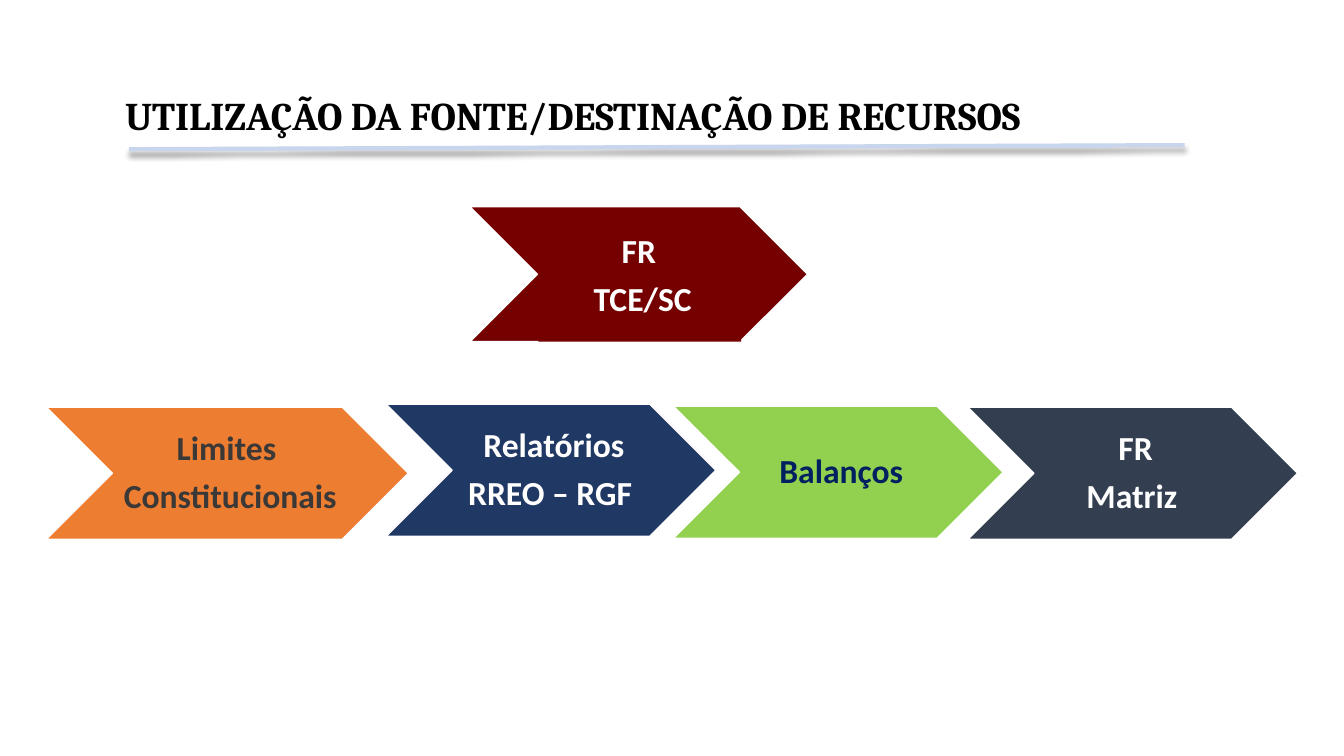
from dataclasses import dataclass

from lxml import etree
from pptx import Presentation
from pptx.dml.color import RGBColor
from pptx.enum.shapes import MSO_CONNECTOR, MSO_SHAPE
from pptx.enum.text import MSO_ANCHOR, MSO_AUTO_SIZE, PP_ALIGN
from pptx.oxml import parse_xml
from pptx.oxml.ns import nsdecls
from pptx.slide import Slide
from pptx.text.text import TextFrame
from pptx.util import Inches, Pt

BLACK = RGBColor(0x00, 0x00, 0x00)
WHITE = RGBColor(0xFF, 0xFF, 0xFF)
PALE_BLUE = RGBColor(0xC7, 0xD5, 0xED)
ORANGE = RGBColor(0xED, 0x7D, 0x31)
GREEN = RGBColor(0x92, 0xD0, 0x50)
NAVY = RGBColor(0x20, 0x38, 0x64)
SLATE = RGBColor(0x33, 0x3F, 0x50)
DARK_RED = RGBColor(0x74, 0x00, 0x00)
CHARCOAL = RGBColor(0x3B, 0x38, 0x38)
DEEP_BLUE = RGBColor(0x00, 0x20, 0x60)


@dataclass(frozen=True)
class Block:
    left: float
    top: float
    width: float
    height: float
    fill: RGBColor
    lines: tuple[str, ...] = ()
    color: RGBColor = WHITE
    kind: MSO_SHAPE = MSO_SHAPE.CHEVRON
    outlined: bool = True


BLOCKS = (
    Block(0.46, 4.04, 3.59, 1.31, ORANGE, ("Limites ", "Constitucionais"), CHARCOAL),
    Block(6.68, 4.03, 3.27, 1.31, GREEN, ("Balanços",), DEEP_BLUE),
    Block(3.83, 4.01, 3.27, 1.31, NAVY, ("Relatórios", "RREO – RGF ")),
    Block(9.6, 4.04, 3.27, 1.31, SLATE, ("FR", "Matriz ")),
    Block(4.66, 2.05, 3.35, 1.34, DARK_RED),
    Block(5.34, 2.09, 2.01, 1.3, DARK_RED, ("FR ", "TCE/SC"),
          kind=MSO_SHAPE.RECTANGLE, outlined=False),
)


def write_text(
    frame: TextFrame,
    lines: tuple[str, ...],
    *,
    font: str,
    size: float,
    color: RGBColor,
    align: PP_ALIGN = PP_ALIGN.LEFT,
    anchor: MSO_ANCHOR = MSO_ANCHOR.TOP,
    line_spacing: float = 1.0,
    space_after: float = 0,
) -> None:
    frame.word_wrap = True
    frame.vertical_anchor = anchor
    for index, line in enumerate(lines):
        paragraph = frame.add_paragraph() if index else frame.paragraphs[0]
        paragraph.alignment = align
        paragraph.line_spacing = line_spacing
        paragraph.space_before = Pt(0)
        paragraph.space_after = Pt(space_after)
        run = paragraph.add_run()
        run.text = line
        run.font.name = font
        run.font.size = Pt(size)
        run.font.bold = True
        run.font.color.rgb = color


def add_title(slide: Slide) -> None:
    title = slide.shapes.title
    title.left, title.top = Inches(1.14), Inches(0.86)
    title.width, title.height = Inches(11.06), Inches(0.57)
    title.text_frame.auto_size = MSO_AUTO_SIZE.NONE
    write_text(title.text_frame, ("UTILIZAÇÃO DA FONTE/DESTINAÇÃO DE RECURSOS",),
               font="Cambria", size=28, color=BLACK)


def add_title_rule(slide: Slide) -> None:
    rule = slide.shapes.add_connector(
        MSO_CONNECTOR.STRAIGHT, Inches(1.28), Inches(1.48), Inches(11.75), Inches(1.44))
    rule.line.color.rgb = PALE_BLUE
    rule.line.width = Pt(3)
    effects = parse_xml(f"<a:effectLst {nsdecls('a')}/>")
    shadow = etree.SubElement(
        effects, effects.tag.replace("effectLst", "outerShdw"),
        blurRad=str(Pt(4)), dist=str(Pt(3)), dir="5400000", rotWithShape="0")
    color = etree.SubElement(shadow, effects.tag.replace("effectLst", "srgbClr"), val=str(BLACK))
    etree.SubElement(color, effects.tag.replace("effectLst", "alpha"), val="40000")
    rule.line._get_or_add_ln().addnext(effects)


def add_block(slide: Slide, block: Block) -> None:
    shape = slide.shapes.add_shape(
        block.kind, Inches(block.left), Inches(block.top),
        Inches(block.width), Inches(block.height))
    shape.shadow.inherit = False
    shape.fill.solid()
    shape.fill.fore_color.rgb = block.fill
    if block.outlined:
        shape.line.color.rgb = WHITE
        shape.line.width = Pt(1)
    else:
        shape.line.fill.background()
    frame = shape.text_frame
    frame.margin_left = Inches(0.1)
    frame.margin_top = frame.margin_right = frame.margin_bottom = Inches(0.04)
    write_text(frame, block.lines, font="Calibri", size=24, color=block.color,
               align=PP_ALIGN.CENTER, anchor=MSO_ANCHOR.MIDDLE,
               line_spacing=0.9, space_after=8.4)


def main() -> None:
    presentation = Presentation()
    presentation.slide_width = Inches(13.33)
    presentation.slide_height = Inches(7.5)
    slide = presentation.slides.add_slide(presentation.slide_layouts.get_by_name("Title Only"))
    add_title(slide)
    add_title_rule(slide)
    for block in BLOCKS:
        add_block(slide, block)
    presentation.save("out.pptx")


if __name__ == "__main__":
    main()
